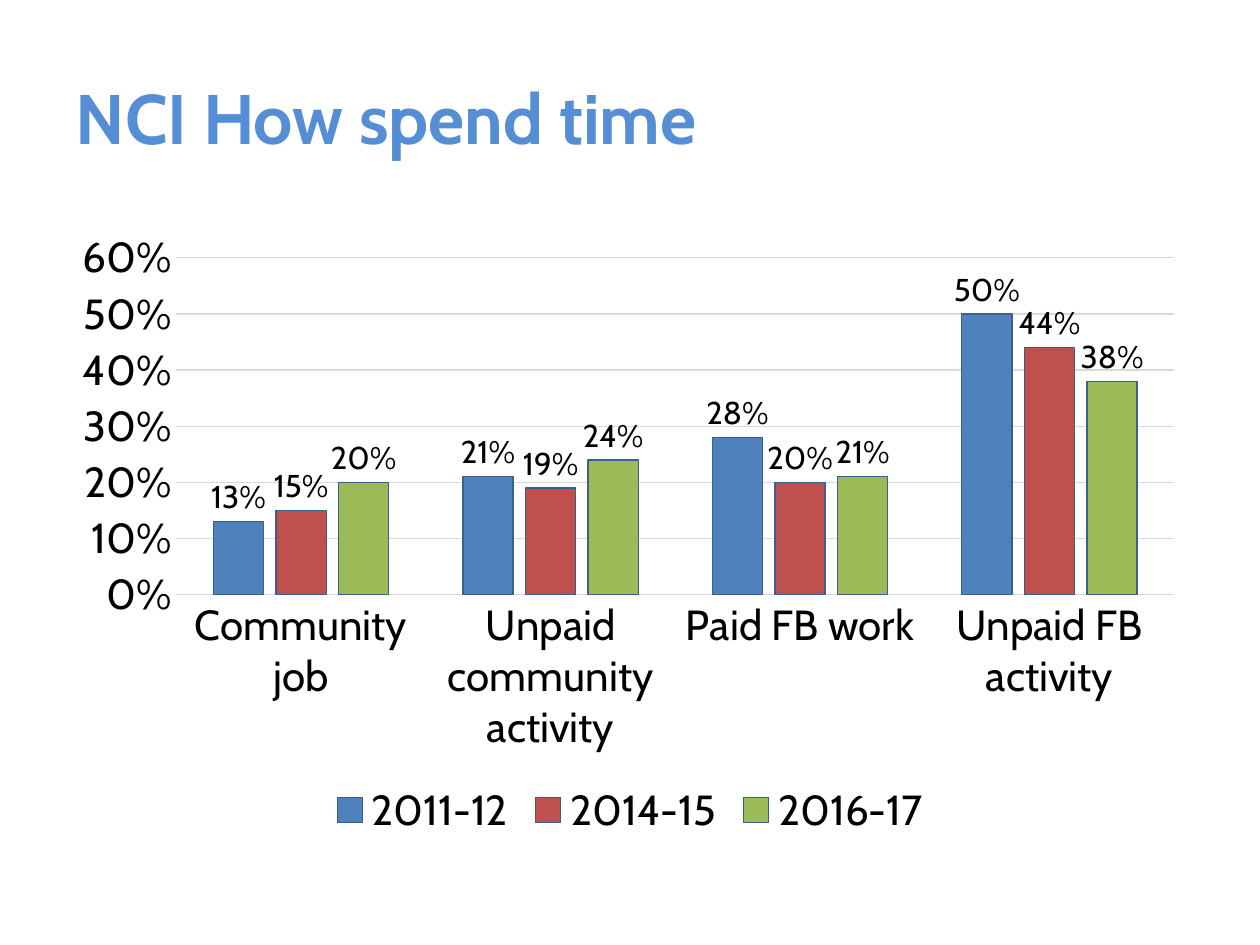
"""Build a slide with a clustered column chart of how time is spent."""
from dataclasses import dataclass

from lxml import etree
from pptx import Presentation
from pptx.chart.chart import Chart
from pptx.chart.data import CategoryChartData
from pptx.chart.series import BarSeries
from pptx.dml.color import RGBColor
from pptx.dml.line import LineFormat
from pptx.enum.chart import XL_CHART_TYPE, XL_LABEL_POSITION, XL_LEGEND_POSITION, XL_TICK_MARK
from pptx.enum.text import MSO_ANCHOR, PP_ALIGN
from pptx.oxml.ns import qn
from pptx.slide import Slide
from pptx.text.text import Font
from pptx.util import Pt

COLUMN_CLUSTERED = XL_CHART_TYPE.COLUMN_CLUSTERED
OUTSIDE_END = XL_LABEL_POSITION.OUTSIDE_END
LEGEND_BOTTOM = XL_LEGEND_POSITION.BOTTOM
NO_TICKS = XL_TICK_MARK.NONE
MIDDLE = MSO_ANCHOR.MIDDLE
LEFT = PP_ALIGN.LEFT
TITLE_ONLY_LAYOUT = 5
PERCENT = "0%"


@dataclass(frozen=True)
class Theme:
    """Colours and type sizes of the slide."""

    font: str = "Cabin"
    title: str = "558ED5"
    text: str = "000000"
    grid: str = "D9D9D9"
    outline: str = "3A5F8C"
    title_size: int = 40
    axis_size: int = 24
    label_size: int = 18
    line_width: float = 0.75


@dataclass(frozen=True)
class Box:
    """A rectangle: in points on the slide, in fractions inside a chart."""

    left: float
    top: float
    width: float
    height: float


@dataclass(frozen=True)
class Period:
    """One survey period with its share per category."""

    name: str
    color: str
    shares: tuple[float, ...]


THEME = Theme()
TITLE_BOX = Box(36, 21.6, 648, 90)
CHART_BOX = Box(36, 126, 648, 356.4)
PLOT_BOX = Box(0.1, 0.06, 0.88, 0.54)
CATEGORIES = ("Community job", "Unpaid community activity", "Paid FB work", "Unpaid FB activity")
PERIODS = (
    Period("2011-12", "4F81BD", (0.13, 0.21, 0.28, 0.5)),
    Period("2014-15", "C0504D", (0.15, 0.19, 0.2, 0.44)),
    Period("2016-17", "9BBB59", (0.2, 0.24, 0.21, 0.38)),
)


def style_font(font: Font, size: int, color: str, bold: bool = False) -> None:
    """Apply the theme font with a size, colour and weight."""
    font.name = THEME.font
    font.size = Pt(size)
    font.bold = bold
    font.color.rgb = RGBColor.from_string(color)


def style_line(line: LineFormat, color: str) -> None:
    """Give a line its colour and the common width."""
    line.color.rgb = RGBColor.from_string(color)
    line.width = Pt(THEME.line_width)


def add_title(slide: Slide, text: str) -> None:
    """Place and fill the title placeholder."""
    title = slide.shapes.title
    title.left, title.top = Pt(TITLE_BOX.left), Pt(TITLE_BOX.top)
    title.width, title.height = Pt(TITLE_BOX.width), Pt(TITLE_BOX.height)
    title.text_frame.vertical_anchor = MIDDLE
    paragraph = title.text_frame.paragraphs[0]
    paragraph.alignment = LEFT
    run = paragraph.add_run()
    run.text = text
    style_font(run.font, THEME.title_size, THEME.title, bold=True)


def place_plot(chart: Chart, box: Box) -> None:
    """Fix the inner plot area at fractions of the chart."""
    plot_area = chart.plots[0]._element.getparent()
    for layout in plot_area.findall(qn("c:layout")):
        plot_area.remove(layout)
    layout = etree.Element(qn("c:layout"))
    manual = etree.SubElement(layout, qn("c:manualLayout"))
    settings = (
        ("layoutTarget", "inner"), ("xMode", "edge"), ("yMode", "edge"),
        ("x", box.left), ("y", box.top), ("w", box.width), ("h", box.height),
    )
    for name, value in settings:
        etree.SubElement(manual, qn(f"c:{name}")).set("val", str(value))
    plot_area.insert(0, layout)


def style_axes(chart: Chart) -> None:
    """Format both axes and the gridlines."""
    for axis in (chart.category_axis, chart.value_axis):
        axis.major_tick_mark = NO_TICKS
        axis.minor_tick_mark = NO_TICKS
        style_font(axis.tick_labels.font, THEME.axis_size, THEME.text)
    style_line(chart.category_axis.format.line, THEME.grid)
    values = chart.value_axis
    values.minimum_scale, values.maximum_scale, values.major_unit = 0, 0.6, 0.1
    values.tick_labels.number_format = PERCENT
    values.tick_labels.number_format_is_linked = False
    values.format.line.fill.background()
    style_line(values.major_gridlines.format.line, THEME.grid)


def style_series(series: BarSeries, period: Period) -> None:
    """Colour the columns of one period and label them."""
    series.format.fill.solid()
    series.format.fill.fore_color.rgb = RGBColor.from_string(period.color)
    style_line(series.format.line, THEME.outline)
    labels = series.data_labels
    labels.show_value = True
    labels.number_format = PERCENT
    labels.number_format_is_linked = False
    labels.position = OUTSIDE_END
    style_font(labels.font, THEME.label_size, THEME.text)


def add_time_chart(slide: Slide) -> None:
    """Add the column chart with its legend."""
    data = CategoryChartData(number_format=PERCENT)
    data.categories = CATEGORIES
    for period in PERIODS:
        data.add_series(period.name, period.shares)
    chart = slide.shapes.add_chart(
        COLUMN_CLUSTERED, Pt(CHART_BOX.left), Pt(CHART_BOX.top),
        Pt(CHART_BOX.width), Pt(CHART_BOX.height), data,
    ).chart
    style_font(chart.font, THEME.axis_size, THEME.text)
    chart.has_title = False
    chart.has_legend = True
    chart.legend.position = LEGEND_BOTTOM
    chart.legend.include_in_layout = False
    style_font(chart.legend.font, THEME.axis_size, THEME.text)
    plot = chart.plots[0]
    plot.gap_width, plot.overlap = 148, -25
    plot.vary_by_categories = False
    style_axes(chart)
    for series, period in zip(plot.series, PERIODS):
        style_series(series, period)
    place_plot(chart, PLOT_BOX)


def main() -> None:
    """Create and save the presentation."""
    presentation = Presentation()
    presentation.slide_width, presentation.slide_height = Pt(720), Pt(540)
    slide = presentation.slides.add_slide(presentation.slide_layouts[TITLE_ONLY_LAYOUT])
    add_title(slide, "NCI How spend time")
    add_time_chart(slide)
    presentation.save("out.pptx")


if __name__ == "__main__":
    main()
